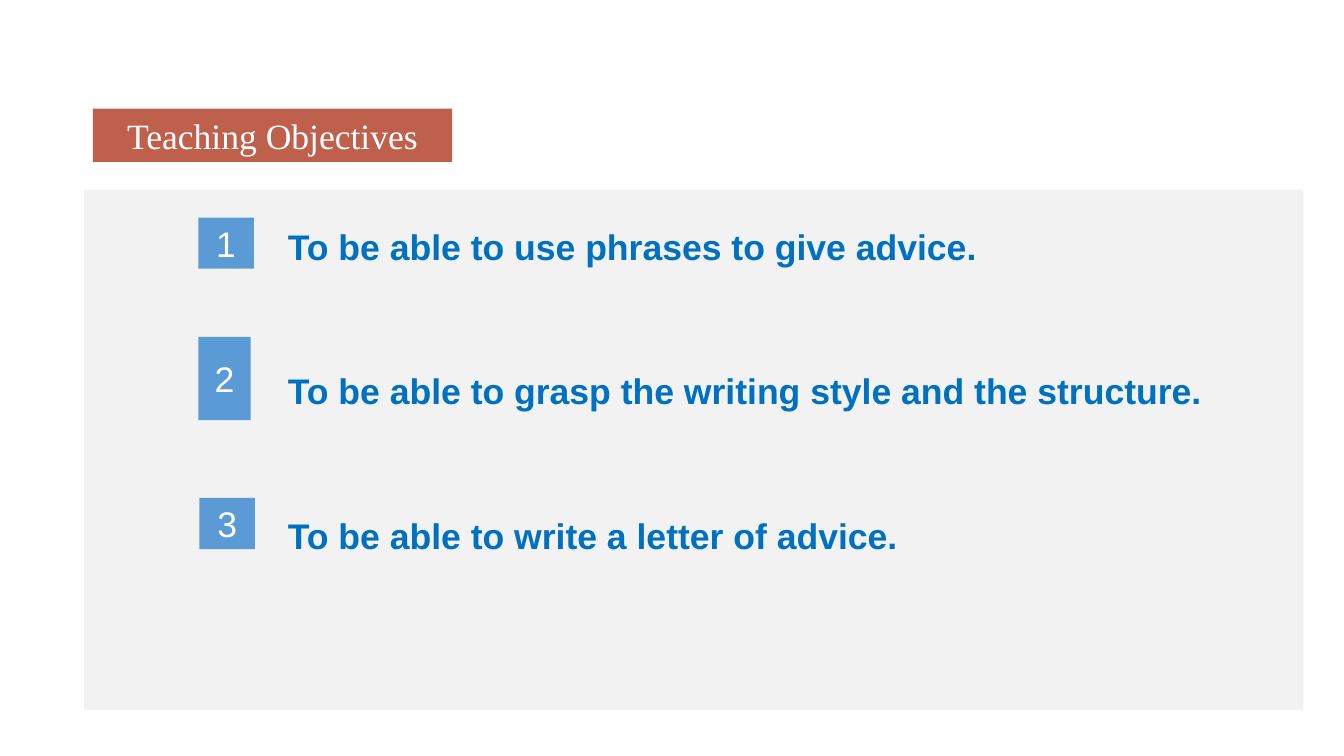
from dataclasses import dataclass

from pptx import Presentation
from pptx.dml.color import RGBColor
from pptx.enum.shapes import MSO_SHAPE
from pptx.enum.text import MSO_ANCHOR, MSO_AUTO_SIZE, PP_ALIGN
from pptx.shapes.autoshape import Shape
from pptx.slide import Slide
from pptx.text.text import _Paragraph as Paragraph
from pptx.util import Inches, Pt

COLOURS = {
    "panel": "F2F2F2",
    "number": "5B9BD5",
    "title": "BF604C",
    "objective": "0070C0",
    "white": "FFFFFF",
}
TEXT_SIZE = 24


@dataclass
class Block:
    left: float
    top: float
    width: float
    height: float
    colour: str
    text: str = ""
    font: str = "Arial"


PANEL = Block(0.79, 1.78, 11.43, 4.88, "panel")
TITLE = Block(0.87, 1.02, 3.37, 0.5, "title", "Teaching Objectives", "Times New Roman")
NUMBERS = [
    Block(1.86, 2.04, 0.52, 0.48, "number", "1"),
    Block(1.86, 3.16, 0.49, 0.78, "number", "2"),
    Block(1.87, 4.67, 0.52, 0.48, "number", "3"),
]
OBJECTIVES = [
    "To be able to use phrases to give advice.",
    "To be able to grasp the writing style and the structure.",
    "To be able to write a letter of advice.",
]


def format_text(para: Paragraph, font: str, colour: str, bold: bool = False) -> None:
    for span in para.runs:
        span.font.name = font
        span.font.size = Pt(TEXT_SIZE)
        span.font.bold = bold
        span.font.color.rgb = RGBColor.from_string(COLOURS[colour])


def add_block(page: Slide, block: Block) -> Shape:
    shape = page.shapes.add_shape(
        MSO_SHAPE.RECTANGLE,
        Inches(block.left), Inches(block.top),
        Inches(block.width), Inches(block.height),
    )
    shape.shadow.inherit = False
    shape.fill.solid()
    shape.fill.fore_color.rgb = RGBColor.from_string(COLOURS[block.colour])
    shape.line.fill.background()
    if block.text:
        frame = shape.text_frame
        frame.text = block.text
        frame.vertical_anchor = MSO_ANCHOR.MIDDLE
        para = frame.paragraphs[0]
        para.alignment = PP_ALIGN.CENTER
        format_text(para, block.font, "white")
    return shape


def add_objectives(page: Slide) -> None:
    box = page.shapes.add_textbox(Inches(2.6), Inches(1.86), Inches(9.78), Inches(6.41))
    frame = box.text_frame
    frame.word_wrap = True
    for index, objective in enumerate(OBJECTIVES):
        para = frame.add_paragraph() if index else frame.paragraphs[0]
        para.text = objective
        para.line_spacing = 1.5
        para.space_before = Pt(54.4 if index else 0)
        format_text(para, "Arial", "objective", bold=True)


def main() -> None:
    deck = Presentation()
    deck.slide_width = Inches(12.6)
    deck.slide_height = Inches(7.09)
    page = deck.slides.add_slide(deck.slide_layouts[6])

    add_block(page, PANEL)
    for number in NUMBERS:
        add_block(page, number)
    title = add_block(page, TITLE)
    title.text_frame.vertical_anchor = MSO_ANCHOR.TOP
    title.text_frame.auto_size = MSO_AUTO_SIZE.SHAPE_TO_FIT_TEXT
    add_objectives(page)

    deck.save("out.pptx")


if __name__ == "__main__":
    main()
